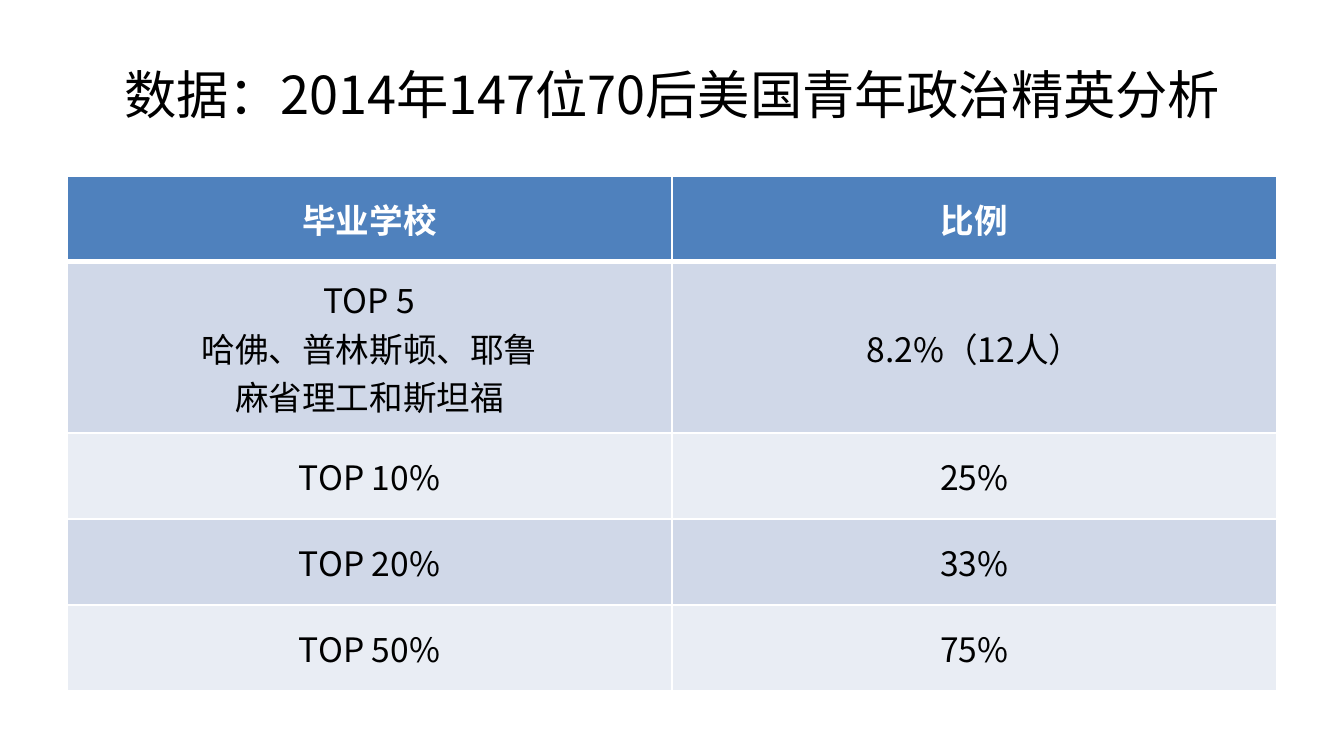
import pptx
import pptx.dml.color
import pptx.enum.text
import pptx.oxml.ns
import pptx.util
from lxml import etree

EMU_PER_PX = 914400 / 134.4
FONT = "Noto Sans CJK SC"
BLACK = pptx.dml.color.RGBColor(0x00, 0x00, 0x00)
WHITE = pptx.dml.color.RGBColor(0xFF, 0xFF, 0xFF)
HEADER_BLUE = pptx.dml.color.RGBColor(0x4F, 0x81, 0xBD)
BAND_DARK = pptx.dml.color.RGBColor(0xD0, 0xD8, 0xE8)
BAND_LIGHT = pptx.dml.color.RGBColor(0xE9, 0xED, 0xF4)

TITLE = "数据：2014年147位70后美国青年政治精英分析"
ROWS = [
    ("毕业学校", "比例"),
    ("TOP 5\n哈佛、普林斯顿、耶鲁\n麻省理工和斯坦福", "8.2%（12人）"),
    ("TOP 10%", "25%"),
    ("TOP 20%", "33%"),
    ("TOP 50%", "75%"),
]
ROW_HEIGHTS = [86, 171, 86, 86, 86]


def px(length):
    return pptx.util.Emu(round(length * EMU_PER_PX))


class SlideBuilder:
    """Holds the font and the slide being filled."""

    def __init__(self, slide, font_name):
        self.slide = slide
        self.font_name = font_name

    def format_text(self, text_frame, size, color, bold=False):
        text_frame.word_wrap = True
        for paragraph in text_frame.paragraphs:
            paragraph.alignment = pptx.enum.text.PP_ALIGN.CENTER
            font = paragraph.font
            font.size = pptx.util.Pt(size)
            font.bold = bold
            font.color.rgb = color
            font.name = self.font_name
            properties = paragraph._p.pPr.find(pptx.oxml.ns.qn("a:defRPr"))
            east_asian = etree.SubElement(properties, pptx.oxml.ns.qn("a:ea"))
            east_asian.set("typeface", self.font_name)

    def title(self, text, left, top, width, height):
        shape = self.slide.shapes.title
        shape.left, shape.top = px(left), px(top)
        shape.width, shape.height = px(width), px(height)
        text_frame = shape.text_frame
        text_frame.text = text
        text_frame.vertical_anchor = pptx.enum.text.MSO_ANCHOR.MIDDLE
        text_frame.auto_size = pptx.enum.text.MSO_AUTO_SIZE.NONE
        self.format_text(text_frame, 28, BLACK)

    def cell_borders(self, cell, top, bottom):
        """Draw white borders; top and bottom are widths in points."""
        properties = cell._tc.get_or_add_tcPr()
        widths = {"lnL": 1, "lnR": 1, "lnT": top, "lnB": bottom}
        for position, (side, width) in enumerate(widths.items()):
            line = etree.Element(pptx.oxml.ns.qn(f"a:{side}"))
            line.set("w", str(pptx.util.Pt(width)))
            fill = etree.SubElement(line, pptx.oxml.ns.qn("a:solidFill"))
            color = etree.SubElement(fill, pptx.oxml.ns.qn("a:srgbClr"))
            color.set("val", str(WHITE))
            properties.insert(position, line)

    def table(self, rows, row_heights, left, top, width):
        column_count = len(rows[0])
        frame = self.slide.shapes.add_table(
            len(rows), column_count, px(left), px(top), px(width), px(sum(row_heights))
        )
        table = frame.table
        table.horz_banding = False
        for column in table.columns:
            column.width = px(width / column_count)
        for row_index, (texts, height) in enumerate(zip(rows, row_heights)):
            table.rows[row_index].height = px(height)
            is_header = row_index == 0
            band = BAND_DARK if row_index % 2 else BAND_LIGHT
            for column_index, text in enumerate(texts):
                cell = table.cell(row_index, column_index)
                cell.text = text
                cell.vertical_anchor = pptx.enum.text.MSO_ANCHOR.MIDDLE
                cell.fill.solid()
                cell.fill.fore_color.rgb = HEADER_BLUE if is_header else band
                self.cell_borders(
                    cell,
                    top=3 if row_index == 1 else 1,
                    bottom=3 if is_header else 1,
                )
                self.format_text(
                    cell.text_frame, 18, WHITE if is_header else BLACK, is_header
                )


def main():
    presentation = pptx.Presentation()
    presentation.slide_width = px(1344)
    presentation.slide_height = px(756)
    title_only_layout = presentation.slide_layouts[5]
    builder = SlideBuilder(presentation.slides.add_slide(title_only_layout), FONT)
    builder.title(TITLE, 67, 31, 1210, 126)
    builder.table(ROWS, ROW_HEIGHTS, 67, 176, 1210)
    presentation.save("out.pptx")


if __name__ == "__main__":
    main()
